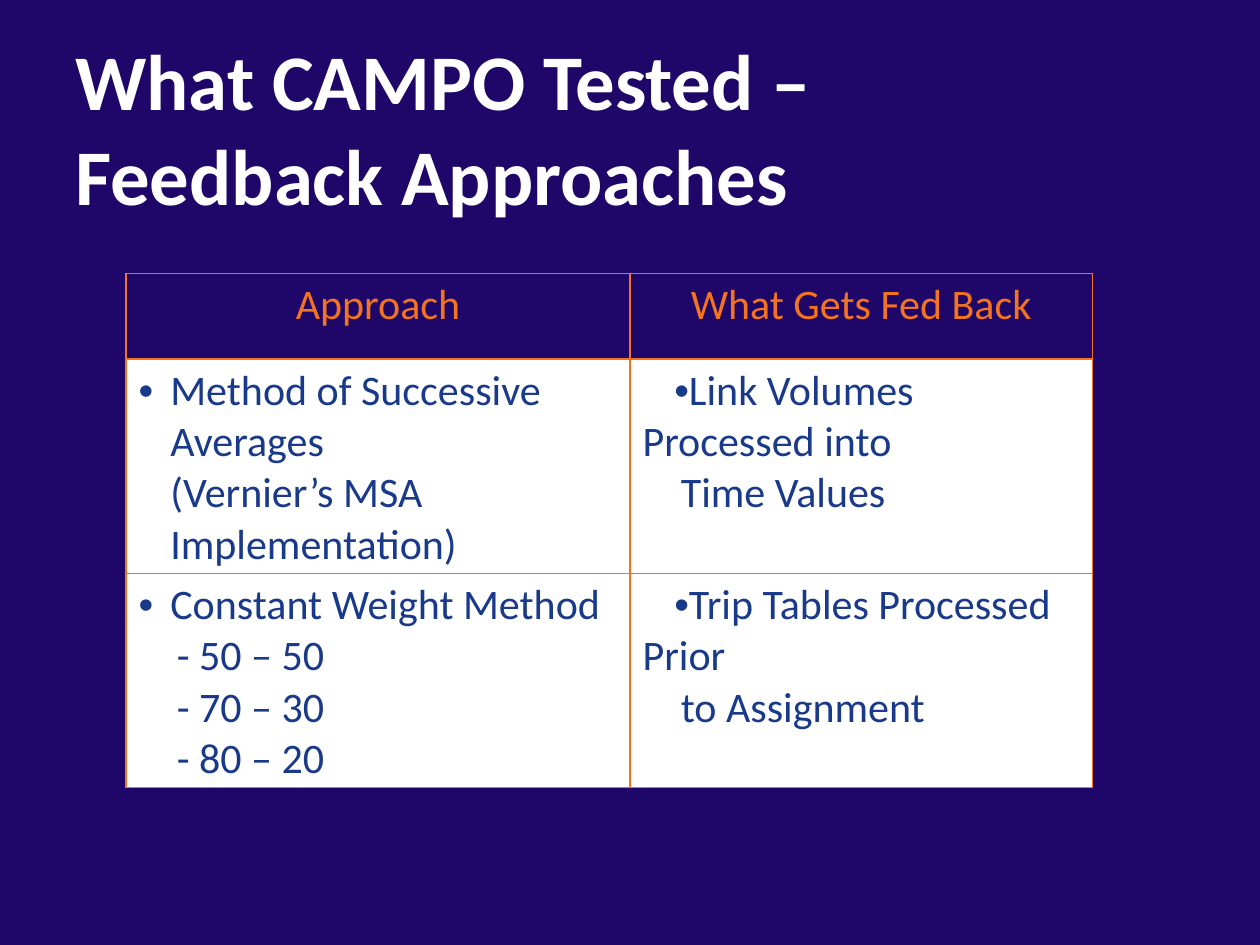
from lxml.etree import SubElement
from pptx import Presentation
from pptx.dml.color import RGBColor
from pptx.enum.text import MSO_ANCHOR, PP_ALIGN
from pptx.oxml.ns import qn
from pptx.util import Cm, Pt

NAVY, ORANGE, BLUE, WHITE = "1F0769", "F37320", "19398A", "FFFFFF"
HANGING = dict(bullet=True, left=0.64, indent=-0.64)
FIRST_LINE = dict(bullet=True, left=0, indent=0.64)
SUB_ITEM = dict(left=0.77)

HEADERS = ["Approach", "What Gets Fed Back"]
ROWS = [
    [
        [("Method of Successive Averages\n(Vernier’s MSA Implementation)", HANGING)],
        [("Link Volumes Processed into", FIRST_LINE), ("Time Values", SUB_ITEM)],
    ],
    [
        [("Constant Weight Method", HANGING), ("- 50 – 50", SUB_ITEM),
         ("- 70 – 30", SUB_ITEM), ("- 80 – 20", SUB_ITEM)],
        [("Trip Tables Processed Prior", FIRST_LINE), ("to Assignment", SUB_ITEM)],
    ],
]


def rgb(color):
    return RGBColor.from_string(color)


def write(p, text, size=24, color=BLUE, bold=False, align=PP_ALIGN.LEFT,
          bullet=False, left=0, indent=0):
    """Fill a paragraph; left and indent are in centimetres."""
    p.text = text
    p.alignment = align
    pPr = p._p.get_or_add_pPr()
    pPr.set("marL", str(Cm(left)))
    pPr.set("indent", str(Cm(indent)))
    if bullet:
        SubElement(pPr, qn("a:buFont"), typeface="Arial")
        SubElement(pPr, qn("a:buChar"), char="•")
    else:
        SubElement(pPr, qn("a:buNone"))
    for r in p.runs:
        r.font.name = "Calibri"
        r.font.size = Pt(size)
        r.font.bold = bold
        r.font.color.rgb = rgb(color)


def add_title(s, text):
    tb = s.shapes.add_textbox(Cm(1.27), Cm(0.43), Cm(22.43), Cm(4.24))
    tf = tb.text_frame
    tf.word_wrap = True
    tf.vertical_anchor = MSO_ANCHOR.MIDDLE
    write(tf.paragraphs[0], text, size=45, color=WHITE, bold=True)


def set_borders(cell, color, width=1):
    tcPr = cell._tc.get_or_add_tcPr()
    for side in ("a:lnL", "a:lnR", "a:lnT", "a:lnB"):
        ln = SubElement(tcPr, qn(side), w=str(Pt(width)))
        fill = SubElement(ln, qn("a:solidFill"))
        SubElement(fill, qn("a:srgbClr"), val=color)


def fill_cell(cell, items, fill=None):
    set_borders(cell, ORANGE)
    if fill:
        cell.fill.solid()
        cell.fill.fore_color.rgb = rgb(fill)
    else:
        cell.fill.background()
    tf = cell.text_frame
    for i, (text, style) in enumerate(items):
        p = tf.add_paragraph() if i else tf.paragraphs[0]
        write(p, text, **style)


def add_approach_table(s):
    widths, heights = [10.16, 9.32], [1.73, 2.72, 3.61]
    table = s.shapes.add_table(len(heights), len(widths), Cm(2.54), Cm(5.51),
                               Cm(sum(widths)), Cm(sum(heights))).table
    for col, width in zip(table.columns, widths):
        col.width = Cm(width)
    for row, height in zip(table.rows, heights):
        row.height = Cm(height)
    header = dict(color=ORANGE, align=PP_ALIGN.CENTER)
    for c, text in enumerate(HEADERS):
        fill_cell(table.cell(0, c), [(text, header)])
    for r, row in enumerate(ROWS, start=1):
        for c, items in enumerate(row):
            fill_cell(table.cell(r, c), items, fill=WHITE)


def main():
    prs = Presentation()
    prs.slide_width, prs.slide_height = Cm(25.4), Cm(19.05)
    s = prs.slides.add_slide(prs.slide_layouts[6])
    s.background.fill.solid()
    s.background.fill.fore_color.rgb = rgb(NAVY)
    add_title(s, "What CAMPO Tested –\nFeedback Approaches")
    add_approach_table(s)
    prs.save("out.pptx")


if __name__ == "__main__":
    main()
